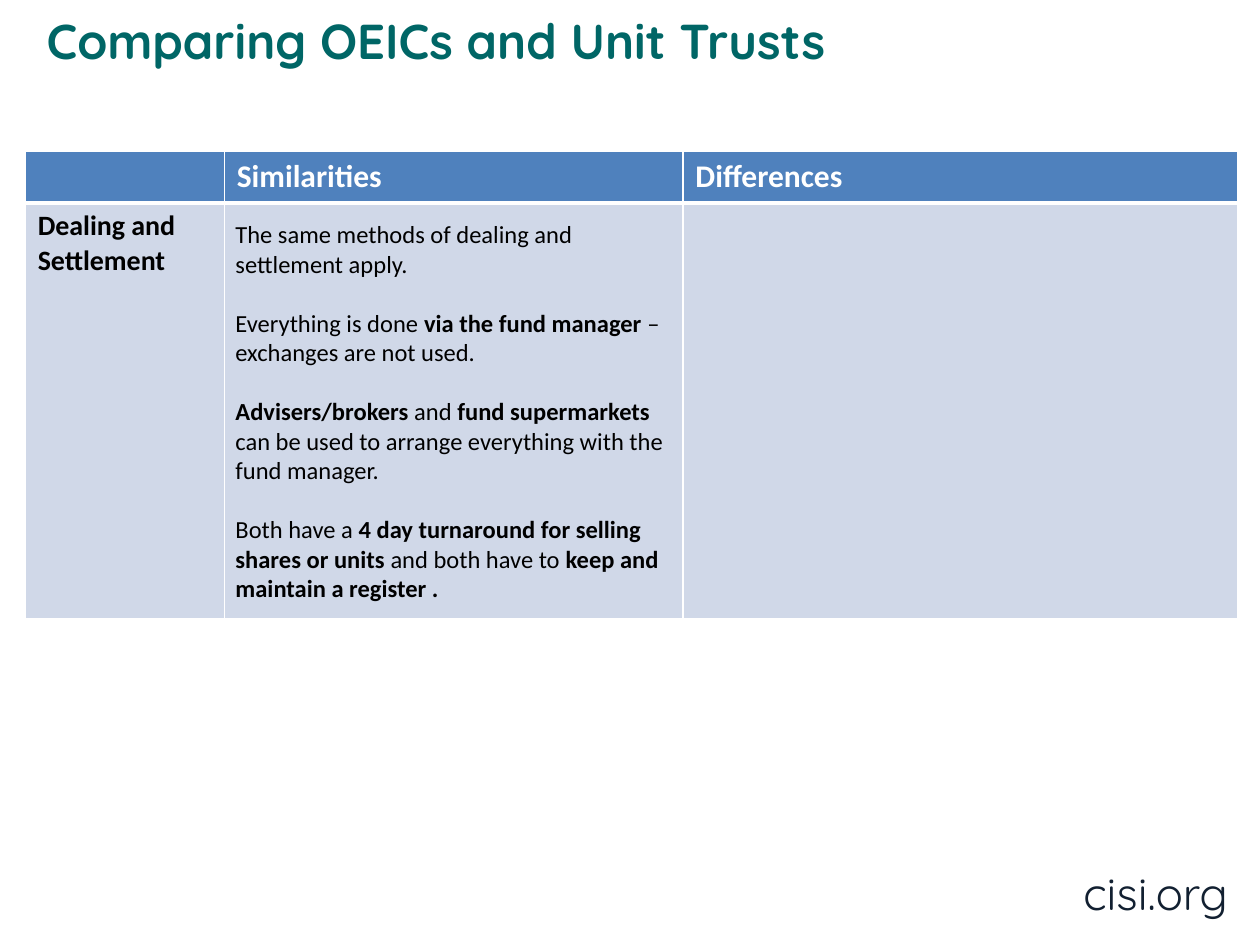
from pptx import Presentation
from pptx.dml.color import RGBColor as RGB
from pptx.enum.text import MSO_ANCHOR as Anchor, MSO_AUTO_SIZE as AutoSize, PP_ALIGN as Align
from pptx.oxml.ns import qn
from pptx.util import Inches, Pt
from lxml.etree import SubElement

TEAL = RGB(0x00, 0x66, 0x66)
NAVY = RGB(0x12, 0x20, 0x31)
BLUE = RGB(0x4F, 0x81, 0xBD)
PALE = RGB(0xD0, 0xD8, 0xE8)
WHITE = RGB(0xFF, 0xFF, 0xFF)
BLACK = RGB(0x00, 0x00, 0x00)

TITLE = {"name": "Quicksand", "size": Pt(28), "bold": True}
SITE = {"name": "Quicksand", "size": Pt(26)}
HEADER = {"name": "Calibri", "size": Pt(18), "bold": True}
ROW_LABEL = {"name": "Calibri", "size": Pt(16), "bold": True}
BODY = {"name": "Calibri", "size": Pt(14)}

COL_WIDTHS = [1.58, 3.64, 4.4]
ROW_HEIGHTS = [0.41, 3.3]
ROWS = [
    (["", "Similarities", "Differences"], HEADER, WHITE, BLUE, {"T": 1, "B": 3}),
    (["Dealing and Settlement", "", ""], ROW_LABEL, BLACK, PALE, {"T": 3, "B": 1}),
]
SIMILARITIES = [
    [("The same methods of dealing and settlement apply.", False)],
    [("Everything is done ", False), ("via the fund manager ", True),
     ("– exchanges are not used.", False)],
    [("Advisers/brokers", True), (" and ", False), ("fund supermarkets ", True),
     ("can be used to arrange everything with the fund manager.", False)],
    [("Both have a ", False), ("4 day turnaround for selling shares or units ", True),
     ("and both have to ", False), ("keep and maintain a register .", True)],
]


def style(font, fmt, color):
    for name, value in fmt.items():
        setattr(font, name, value)
    font.color.rgb = color


def add_text_box(slide, box):
    tf = slide.shapes.add_textbox(*map(Inches, box)).text_frame
    tf.word_wrap = True
    return tf


def add_title(slide, box, text):
    sp = slide.shapes.title
    sp.left, sp.top, sp.width, sp.height = map(Inches, box)
    tf = sp.text_frame
    tf.text = text
    tf.auto_size = AutoSize.NONE
    tf.vertical_anchor = Anchor.MIDDLE
    p = tf.paragraphs[0]
    p.alignment = Align.LEFT
    style(p.runs[0].font, TITLE, TEAL)


def set_borders(cell, widths):
    tc_pr = cell._tc.get_or_add_tcPr()
    for side, width in widths.items():
        ln = SubElement(tc_pr, qn(f"a:ln{side}"), w=str(Pt(width)))
        fill = SubElement(ln, qn("a:solidFill"))
        SubElement(fill, qn("a:srgbClr"), val=str(WHITE))


def add_comparison_table(slide, box):
    table = slide.shapes.add_table(
        len(ROWS), len(COL_WIDTHS), *map(Inches, box)).table
    for col, width in zip(table.columns, COL_WIDTHS):
        col.width = Inches(width)
    for row, height, (texts, fmt, color, fill, edges) in zip(table.rows, ROW_HEIGHTS, ROWS):
        row.height = Inches(height)
        for cell, text in zip(row.cells, texts):
            set_borders(cell, {"L": 1, "R": 1, **edges})
            cell.fill.solid()
            cell.fill.fore_color.rgb = fill
            cell.text = text
            style(cell.text_frame.paragraphs[0].font, fmt, color)


def add_similarities(slide, box):
    tf = add_text_box(slide, box)
    for i, runs in enumerate(SIMILARITIES):
        p = tf.add_paragraph() if i else tf.paragraphs[0]
        if i:
            p.space_before = Pt(17)
        for text, bold in runs:
            r = p.add_run()
            r.text = text
            style(r.font, {**BODY, "bold": bold}, BLACK)


def add_site(slide, box):
    r = add_text_box(slide, box).paragraphs[0].add_run()
    r.text = "cisi.org"
    style(r.font, SITE, NAVY)


def main():
    prs = Presentation()
    prs.slide_width, prs.slide_height = Inches(10), Inches(7.5)
    slide = prs.slides.add_slide(prs.slide_layouts[5])
    add_site(slide, (8.5, 6.82, 1.5, 0.54))
    add_title(slide, (0.27, 0.05, 7.48, 0.54), "Comparing OEICs and Unit Trusts")
    add_comparison_table(slide, (0.2, 1.2, sum(COL_WIDTHS), sum(ROW_HEIGHTS)))
    add_similarities(slide, (1.77, 1.69, 3.62, 3.16))
    prs.save("out.pptx")


if __name__ == "__main__":
    main()
